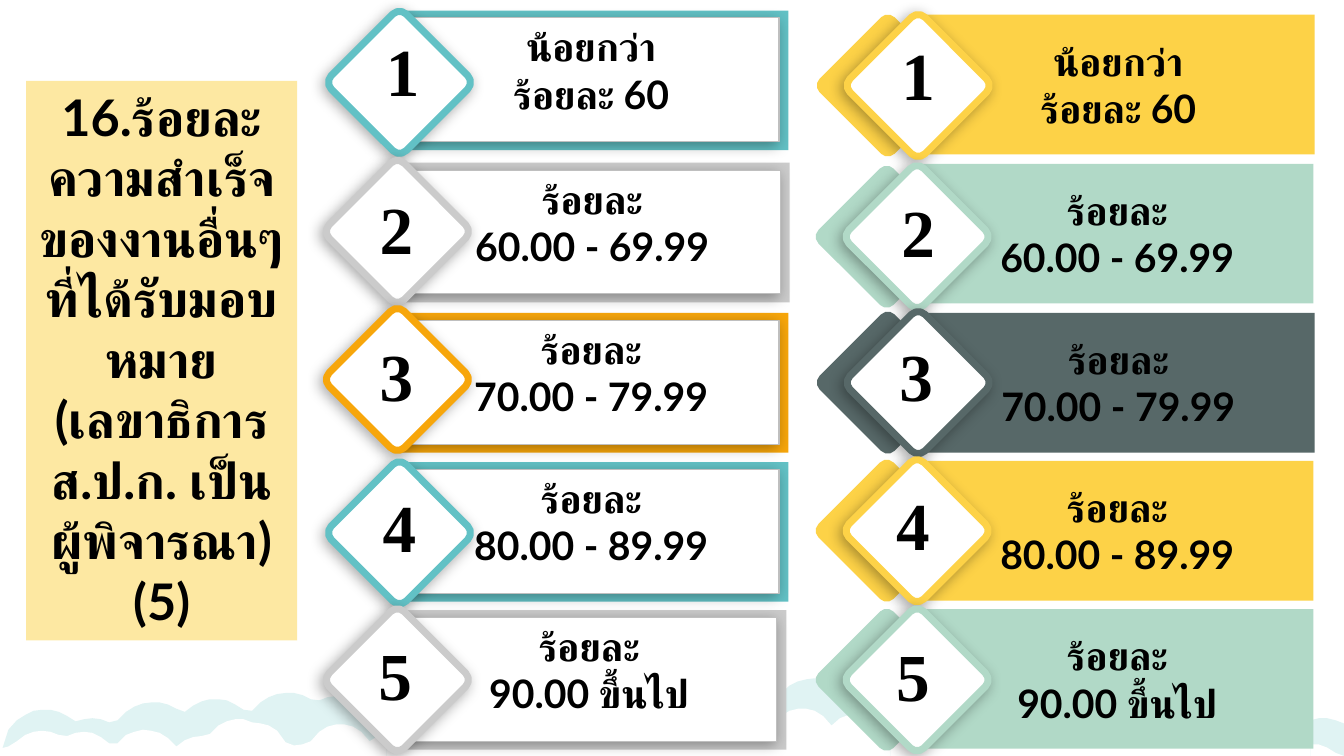
from dataclasses import dataclass
from math import sqrt

from lxml import etree
from pptx import Presentation
from pptx import util as u
from pptx.dml.color import RGBColor
from pptx.enum import shapes, text
from pptx.oxml import ns

PX = 9525
PAGE_WIDTH, PAGE_HEIGHT = 1280, 720
BAR_SIZE = (374, 133)
PANEL_SIZE = (358, 118)
PANEL_INSET = 7
DIAMOND_SIZE = (101, 101)
BACK_DIAMOND_SHIFT = 29
NUMERAL_SIZE = (72, 107)
CLOUD_SPANS = ((0, 368), (744, 848), (1248, 1280))
CLOUD_STEP = 8


@dataclass(frozen=True)
class Theme:
    teal: str = "62C1C5"
    silver: str = "CBCBCB"
    orange: str = "F7A60B"
    yellow: str = "FDD247"
    mint: str = "B1D9C7"
    slate: str = "576868"
    cloud: str = "E0F3F3"
    white: str = "FFFFFF"
    black: str = "000000"
    panel_edge: str = "BFBFBF"
    body_font: str = "Lato"
    numeral_font: str = "Times New Roman"
    title_size: int = 36
    label_size: int = 28
    numeral_size: int = 48


@dataclass(frozen=True)
class Card:
    level: int
    color: str
    bar: tuple[int, int]
    diamond: tuple[int, int]
    numeral: tuple[int, int]


@dataclass(frozen=True)
class CloudBank:
    color: str
    radius: int
    crests: tuple[tuple[int, int], ...]


THEME = Theme()

TITLE = (
    "16.ร้อยละความสำเร็จของงานอื่นๆ ที่ได้รับมอบหมาย (เลขาธิการส.ป.ก. เป็น\n"
    "ผู้พิจารณา)\n(5)"
)

LABELS = (
    "น้อยกว่า\nร้อยละ 60",
    "ร้อยละ\n60.00 - 69.99",
    "ร้อยละ\n70.00 - 79.99",
    "ร้อยละ\n80.00 - 89.99",
    "ร้อยละ\n90.00 ขึ้นไป",
)

FRAMED_CARDS = (
    Card(1, THEME.teal, (377, 10), (330, 28), (358, 6)),
    Card(2, THEME.silver, (378, 155), (328, 170), (352, 156)),
    Card(3, THEME.orange, (377, 298), (328, 311), (352, 296)),
    Card(4, THEME.teal, (377, 440), (330, 457), (355, 440)),
    Card(5, THEME.silver, (375, 581), (328, 597), (351, 581)),
)

FILLED_CARDS = (
    Card(1, THEME.yellow, (878, 14), (824, 31), (849, 10)),
    Card(2, THEME.mint, (877, 156), (823, 175), (849, 159)),
    Card(3, THEME.slate, (878, 298), (824, 314), (847, 296)),
    Card(4, THEME.yellow, (877, 439), (823, 455), (844, 438)),
    Card(5, THEME.mint, (877, 580), (823, 597), (844, 582)),
)

CLOUD_BANKS = (
    CloudBank(THEME.cloud, 42, (
        (43, 676), (87, 684), (146, 669), (205, 666), (274, 660), (321, 663),
        (384, 668), (775, 646), (807, 656), (875, 664), (1260, 684))),
    CloudBank(THEME.white, 33, (
        (10, 711), (40, 696), (79, 697), (138, 695), (192, 701), (227, 685),
        (242, 688), (289, 709), (324, 690), (383, 692), (722, 685), (764, 675),
        (818, 679), (862, 690), (1251, 709))),
)


def paint(box, fill: str, edge: str = "", edge_width: float = 0) -> None:
    box.shadow.inherit = False
    box.fill.solid()
    box.fill.fore_color.rgb = RGBColor.from_string(fill)
    if edge:
        box.line.color.rgb = RGBColor.from_string(edge)
        box.line.width = u.Pt(edge_width)
    else:
        box.line.fill.background()


def add_soft_shadow(box) -> None:
    effects = box._element.spPr.find(ns.qn("a:effectLst"))
    shadow = etree.SubElement(
        effects, ns.qn("a:outerShdw"), blurRad=str(u.Pt(10)), dist=str(u.Pt(3)),
        dir=str(135 * 60000), algn="tr", rotWithShape="0")
    color = etree.SubElement(shadow, ns.qn("a:srgbClr"), val=THEME.black)
    etree.SubElement(color, ns.qn("a:alpha"), val="33000")


def add_box(page, kind, corner: tuple[int, int], size: tuple[int, int]):
    return page.shapes.add_shape(kind, *(value * PX for value in corner + size))


def write(box, words: str, font: str, size: int, align, anchor) -> None:
    frame = box.text_frame
    frame.text = words
    frame.word_wrap = True
    frame.vertical_anchor = anchor
    for para in frame.paragraphs:
        para.alignment = align
        for span in para.runs:
            span.font.name = font
            span.font.size = u.Pt(size)
            span.font.bold = True
            span.font.color.rgb = RGBColor.from_string(THEME.black)
            etree.SubElement(span.font._element, ns.qn("a:cs"), typeface=font)


def write_label(box, level: int, anchor) -> None:
    write(box, LABELS[level - 1], THEME.body_font, THEME.label_size,
          text.PP_ALIGN.CENTER, anchor)


def add_diamond(page, corner: tuple[int, int], fill: str, edge: str = "") -> None:
    diamond = add_box(page, shapes.MSO_SHAPE.ROUNDED_RECTANGLE, corner, DIAMOND_SIZE)
    diamond.adjustments[0] = 0.09
    diamond.rotation = 45
    paint(diamond, fill, edge, 5)
    if edge:
        add_soft_shadow(diamond)


def add_numeral(page, card: Card) -> None:
    box = page.shapes.add_textbox(*(value * PX for value in card.numeral + NUMERAL_SIZE))
    write(box, str(card.level), THEME.numeral_font, THEME.numeral_size,
          text.PP_ALIGN.LEFT, text.MSO_ANCHOR.BOTTOM)
    box.text_frame.margin_bottom = 8 * PX


def add_card(page, card: Card, framed: bool) -> None:
    bar = add_box(page, shapes.MSO_SHAPE.RECTANGLE, card.bar, BAR_SIZE)
    paint(bar, card.color)
    left, top = card.bar
    if framed:
        panel = add_box(page, shapes.MSO_SHAPE.RECTANGLE,
                        (left + PANEL_INSET, top + PANEL_INSET), PANEL_SIZE)
        paint(panel, THEME.white, THEME.panel_edge, 0.75)
        add_soft_shadow(panel)
        write_label(panel, card.level, text.MSO_ANCHOR.TOP)
    else:
        write_label(bar, card.level, text.MSO_ANCHOR.MIDDLE)
        x, y = card.diamond
        add_diamond(page, (x - BACK_DIAMOND_SHIFT, y), card.color)
    add_diamond(page, card.diamond, THEME.white, card.color)
    add_numeral(page, card)


def skyline(bank: CloudBank, x: int) -> int:
    heights = [top + bank.radius - sqrt(bank.radius ** 2 - (x - center) ** 2)
               for center, top in bank.crests if abs(x - center) <= bank.radius]
    return min(round(min(heights, default=PAGE_HEIGHT)), PAGE_HEIGHT)


def add_cloud(page, bank: CloudBank, left: int, right: int) -> None:
    outline = [(x, skyline(bank, x)) for x in range(left, right + 1, CLOUD_STEP)]
    builder = page.shapes.build_freeform(left, PAGE_HEIGHT, scale=PX)
    builder.add_line_segments(outline + [(right, PAGE_HEIGHT)], close=True)
    paint(builder.convert_to_shape(), bank.color)


def add_title(page) -> None:
    title = page.shapes.title
    title.left, title.top, title.width, title.height = (
        value * PX for value in (25, 77, 258, 533))
    title.fill.solid()
    title.fill.fore_color.rgb = RGBColor.from_string(THEME.yellow)
    tint = title._element.spPr.find(".//" + ns.qn("a:srgbClr"))
    etree.SubElement(tint, ns.qn("a:alpha"), val="50000")
    write(title, TITLE, THEME.body_font, THEME.title_size,
          text.PP_ALIGN.CENTER, text.MSO_ANCHOR.TOP)
    title.text_frame.auto_size = text.MSO_AUTO_SIZE.NONE


def main() -> None:
    deck = Presentation()
    deck.slide_width, deck.slide_height = PAGE_WIDTH * PX, PAGE_HEIGHT * PX
    page = deck.slides.add_slide(deck.slide_layouts[5])
    add_title(page)
    for bank in CLOUD_BANKS:
        for left, right in CLOUD_SPANS:
            add_cloud(page, bank, left, right)
    for cards, framed in ((FRAMED_CARDS, True), (FILLED_CARDS, False)):
        for card in cards:
            add_card(page, card, framed)
    deck.save("out.pptx")


if __name__ == "__main__":
    main()
